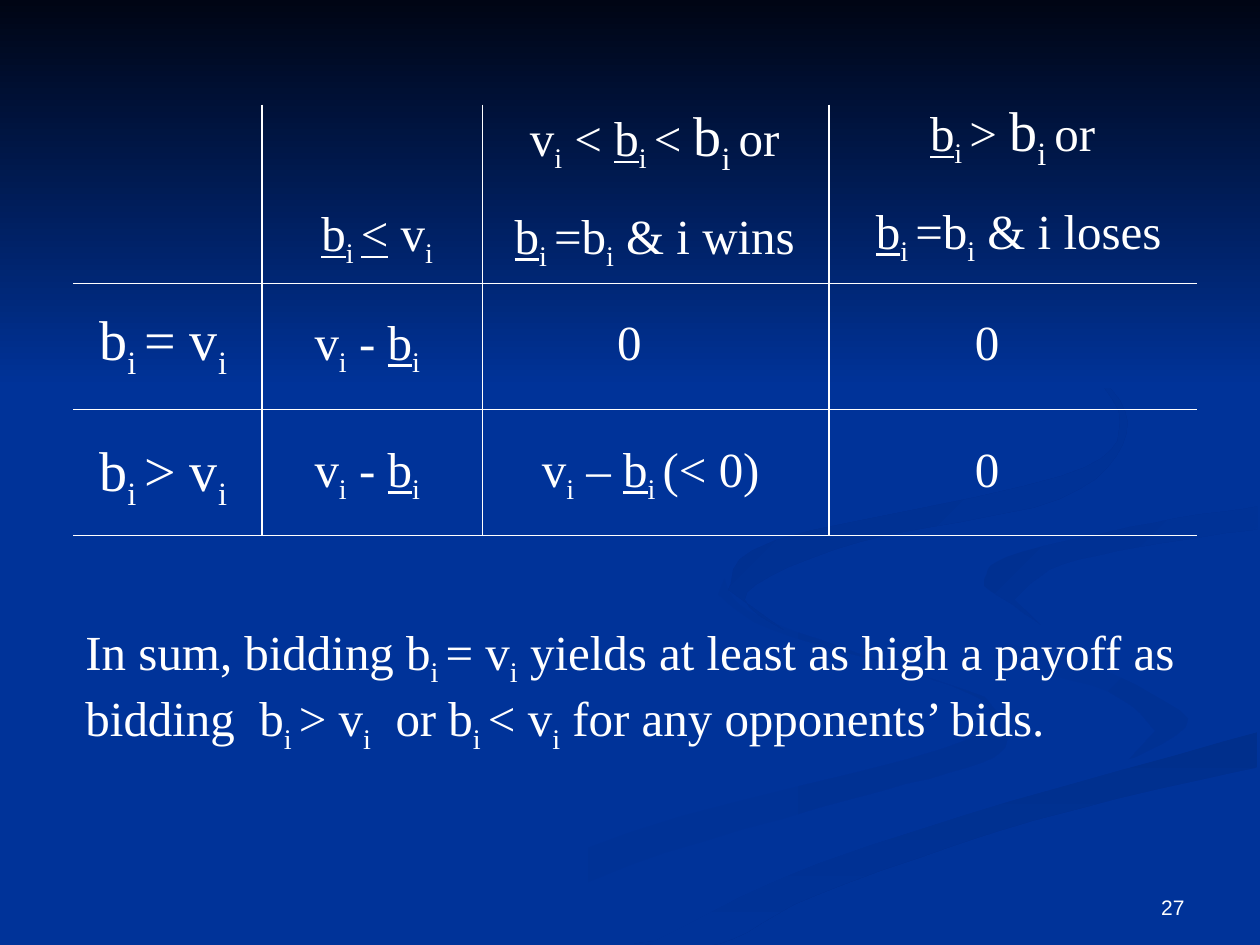
from lxml import etree
from pptx import Presentation
from pptx.dml.color import RGBColor
from pptx.enum.shapes import MSO_CONNECTOR as CONN, MSO_SHAPE as SHAPE
from pptx.enum.text import MSO_ANCHOR as ANCHOR, MSO_AUTO_SIZE as AUTO, PP_ALIGN as ALIGN
from pptx.oxml.ns import qn
from pptx.util import Pt

PX = 9144  # EMU per px, on a 1000 x 750 px slide
BLUE, WHITE = "003399", "FFFFFF"
SERIF = "Times New Roman"

# Edges that two background ribbons share
LOOP = [(725, 464), (759, 498), (871, 530), (943, 570)]
RISE = [(519, 747), (630, 693), (765, 647), (998, 581)]
BEND = [(998, 402), (898, 418), (799, 442), (781, 460)]

# Background ribbons: smooth edges, gradient colours (start, end), angle
RIBBONS = [
    ([[(781, 553), (682, 519), (594, 485), (575, 459)],
      [(570, 472), (611, 499), (728, 535), (785, 562), (749, 594), (499, 661), (300, 749)],
      [(361, 749), (499, 687), (676, 634), (780, 605), (800, 581), (781, 553)]],
     (BLUE, "003193"), 0),
    ([LOOP + [(894, 605)], [(917, 580), (880, 549), (781, 518), (725, 464)]],
     (BLUE, "003193"), 45),
    ([RISE, [(998, 609), (821, 651), (649, 710), (571, 749), (503, 749)]],
     ("002F8C", BLUE), 90),
    ([LOOP + [(926, 593), (780, 634), (619, 684), (477, 749)], RISE,
      [(998, 538), (848, 503), (781, 463)], BEND[::-1],
      [(998, 387), (851, 411), (732, 446), (725, 464)]], (BLUE, BLUE), 0),
    ([BEND, [(781, 465), (826, 496)], [(805, 476), (843, 448), (936, 429), (998, 420)]],
     ("003091", BLUE), 45),
    ([[(762, 233), (864, 291), (894, 344), (841, 396), (683, 430), (593, 470), (622, 500)],
      [(578, 468), (615, 429), (842, 378), (889, 335), (846, 279), (762, 233)]],
     ("002F8E", BLUE), 45),
]

# Text marks: "|" parts the runs; a run may open with
# "," subscript, "_" underline, "^" large
MARKS = ",_^"
PAYOFF = "v|,i| - |_b|,i"
TIE = "_b|,i |=b|,i"
CELLS = [
    (67, 237, 125, 63, ["^b|,^i |^= v|,^i"]),
    (67, 341, 125, 63, ["^b|,^i |^> v|,^i"]),
    (158, 156, 283, 57, ["_b|,i |_<| v|,i"]),
    (383, 75, 283, 134, ["v|,i| < |_b|,i |< |^b|,^i |or ", TIE + "| & i wins "]),
    (667, 71, 283, 134, ["_b|,i |> |^b|,^i |or ", TIE + "| & i loses"]),
    (150, 242, 283, 57, [PAYOFF]),
    (358, 242, 283, 57, ["0"]),
    (642, 242, 283, 57, ["0"]),
    (150, 343, 283, 57, [PAYOFF]),
    (375, 343, 283, 57, ["v|,i| – |_b|,i |(< 0)"]),
    (642, 343, 283, 57, ["0"]),
]
SUMMARY = ("In sum, bidding b|,i |= v|,i| yields at least as high a payoff as "
           "bidding  b|,i |> v|,i|  or b|,i |< v|,i| for any opponents’ bids.")


def rgb(hex_string):
    return RGBColor.from_string(hex_string)


def px(*lengths):
    return [n * PX for n in lengths]


def smooth(knots, steps=6):
    """Points of a Catmull-Rom curve through the knots."""
    ends = [knots[0], *knots, knots[-1]]
    points = [knots[0]]
    for a, b, c, d in zip(ends, ends[1:], ends[2:], ends[3:]):
        for k in range(1, steps + 1):
            t = k / steps
            points.append(tuple(
                (2 * q + (r - p) * t + (2 * p - 5 * q + 4 * r - s) * t ** 2
                 + (3 * q - p - 3 * r + s) * t ** 3) / 2
                for p, q, r, s in zip(a, b, c, d)))
    return points


def add_runs(p, text, size=28, big=32, font=SERIF, color=WHITE):
    for part in text.split("|"):
        body = part.lstrip(MARKS)
        marks = part[:len(part) - len(body)]
        r = p.add_run()
        r.text = body
        r.font.name = font
        r.font.size = Pt(big if "^" in marks else size)
        r.font.color.rgb = rgb(color)
        if "_" in marks:
            r.font.underline = True
        if "," in marks:
            r.font._element.set("baseline", "-25000")


class Deck:
    def __init__(self, prs):
        self.s = prs.slides.add_slide(prs.slide_layouts[6])
        fill = self.s.background.fill
        fill.solid()
        fill.fore_color.rgb = rgb(BLUE)

    def paint(self, sp, colors, angle):
        sp.shadow.inherit = False
        sp.line.fill.background()
        if colors[0] == colors[1]:
            sp.fill.solid()
            sp.fill.fore_color.rgb = rgb(colors[0])
            return
        sp.fill.gradient()
        sp.fill.gradient_angle = (360 - angle) % 360
        for stop, color, position in zip(sp.fill.gradient_stops, colors, (0, 1)):
            stop.color.rgb = rgb(color)
            stop.position = position

    def ribbon(self, edges, colors, angle):
        points = [point for edge in edges for point in smooth(edge)]
        outline = self.s.shapes.build_freeform(*points[0], scale=PX)
        outline.add_line_segments(points[1:], close=True)
        self.paint(outline.convert_to_shape(), colors, angle)

    def band(self, x, y, w, h, colors, angle):
        sp = self.s.shapes.add_shape(SHAPE.RECTANGLE, *px(x, y, w, h))
        self.paint(sp, colors, angle)

    def line(self, x1, y1, x2, y2):
        c = self.s.shapes.add_connector(CONN.STRAIGHT, *px(x1, y1, x2, y2))
        c.line.color.rgb = rgb(WHITE)
        c.line.width = Pt(0.75)
        etree.SubElement(c._element.spPr, qn("a:effectLst"))

    def text(self, x, y, w, h, paragraphs, align=ALIGN.CENTER, anchor=ANCHOR.TOP,
             wrap=True, grow=True, **style):
        tf = self.s.shapes.add_textbox(*px(x, y, w, h)).text_frame
        tf.word_wrap = wrap
        tf.vertical_anchor = anchor
        tf.auto_size = AUTO.SHAPE_TO_FIT_TEXT if grow else AUTO.NONE
        for i, text in enumerate(paragraphs):
            p = tf.add_paragraph() if i else tf.paragraphs[0]
            p.alignment = align
            if i:
                p.space_before = Pt(16)
            add_runs(p, text, **style)


def main():
    prs = Presentation()
    prs.slide_width, prs.slide_height = px(1000, 750)
    deck = Deck(prs)

    # Background
    for ribbon in RIBBONS:
        deck.ribbon(*ribbon)
    deck.band(0, 0, 1000, 308, ("000514", BLUE), 90)

    # Payoff grid
    for y in (225, 325, 425):
        deck.line(58, y, 950, y)
    for x in (208, 383, 658):
        deck.line(x, 83, x, 425)
    for x, y, w, h, paragraphs in CELLS:
        deck.text(x, y, w, h, paragraphs, wrap=w > 125)

    # Conclusion and page number
    deck.text(58, 488, 908, 104, [SUMMARY], align=ALIGN.LEFT)
    deck.text(717, 683, 233, 52, ["27"], align=ALIGN.RIGHT, anchor=ANCHOR.BOTTOM,
              grow=False, size=12, font="Arial")
    prs.save("out.pptx")


if __name__ == "__main__":
    main()
